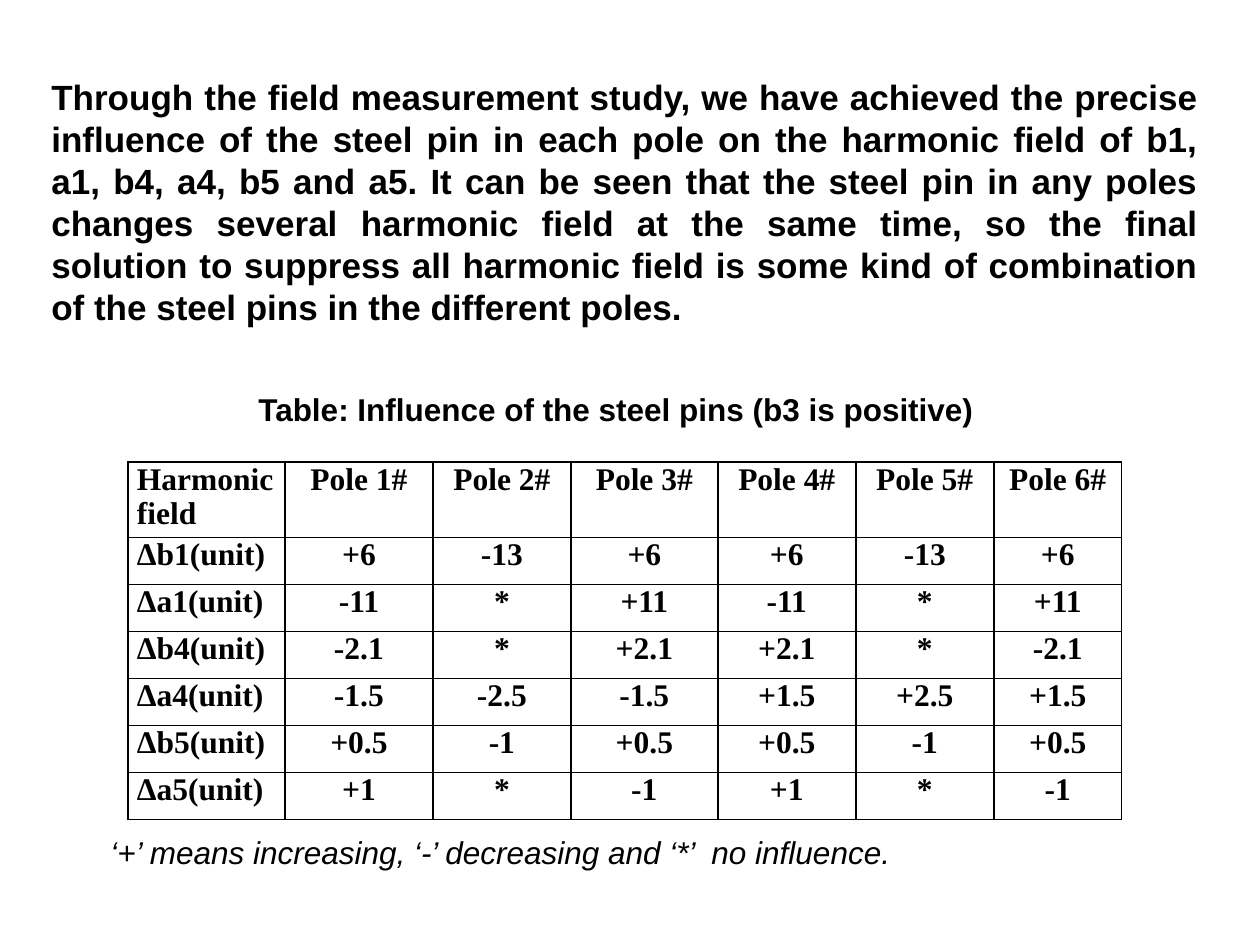
from pptx import Presentation
from pptx.dml.color import RGBColor as RGB
from pptx.enum.text import MSO_AUTO_SIZE as Fit, PP_ALIGN as Al
from pptx.oxml.ns import qn
from pptx.util import Pt
from lxml.etree import SubElement as Sub

SCALE = 914400 / 126  # EMU in one px
HUES = {"ink": "000000"}
SANS, SERIF = "Arial", "Times New Roman"

INTRO = (
    "Through the field measurement study, we have achieved the precise "
    "influence of the steel pin in each pole on the harmonic field of b1, "
    "a1, b4, a4, b5 and a5. It can be seen that the steel pin in any poles "
    "changes several harmonic field at the same time, so the final solution "
    "to suppress all harmonic field is some kind of combination of the steel "
    "pins in the different poles."
)
TITLE = "Table: Influence of the steel pins (b3 is positive)"
NOTE = "‘+’ means increasing, ‘-’ decreasing and ‘*’  no influence."

COLS = [157, 148, 138, 147, 138, 138, 128]
HEAD_H, ROW_H = 69, 47
HEAD = ["Harmonic\nfield"] + [f"Pole {n}#" for n in range(1, 7)]
DATA = {
    "b1": ["+6", "-13", "+6", "+6", "-13", "+6"],
    "a1": ["-11", "*", "+11", "-11", "*", "+11"],
    "b4": ["-2.1", "*", "+2.1", "+2.1", "*", "-2.1"],
    "a4": ["-1.5", "-2.5", "-1.5", "+1.5", "+2.5", "+1.5"],
    "b5": ["+0.5", "-1", "+0.5", "+0.5", "-1", "+0.5"],
    "a5": ["+1", "*", "-1", "+1", "*", "-1"],
}


def px(n):
    return round(n * SCALE)


def add_run(para, text, size, face, bold=False, slant=False):
    run = para.add_run()
    run.text = text
    font = run.font
    font.size, font.name = Pt(size), face
    font.bold, font.italic = bold, slant
    font.color.rgb = RGB.from_string(HUES["ink"])


def add_text(slide, box, text, size, **style):
    frame = slide.shapes.add_textbox(*map(px, box)).text_frame
    frame.word_wrap = True
    frame.auto_size = Fit.SHAPE_TO_FIT_TEXT
    para = frame.paragraphs[0]
    para.alignment = Al.JUSTIFY
    add_run(para, text, size, SANS, **style)


def add_edges(cell):
    """Draw a 1 pt line on all four sides; lines go before the fill."""
    props = cell._tc.get_or_add_tcPr()
    for i, side in enumerate(("lnL", "lnR", "lnT", "lnB")):
        line = Sub(props, qn(f"a:{side}"), w=str(Pt(1)))
        fill = Sub(line, qn("a:solidFill"))
        Sub(fill, qn("a:srgbClr"), val=HUES["ink"])
        props.insert(i, line)


def fill_cell(cell, text, align):
    cell.margin_left = cell.margin_right = px(9)
    cell.margin_top = cell.margin_bottom = 0
    cell.fill.background()
    add_edges(cell)
    frame = cell.text_frame
    for i, part in enumerate(text.split("\n")):
        para = frame.add_paragraph() if i else frame.paragraphs[0]
        para.alignment = align
        add_run(para, part, 18, SERIF, bold=True)


def add_grid(slide, left, top):
    rows = [HEAD] + [[f"Δ{key}(unit)"] + vals for key, vals in DATA.items()]
    highs = [HEAD_H] + [ROW_H] * len(DATA)
    box = map(px, (left, top, sum(COLS), sum(highs)))
    table = slide.shapes.add_table(len(rows), len(COLS), *box).table
    table.first_row = table.horz_banding = False
    for col, wide in zip(table.columns, COLS):
        col.width = px(wide)
    for r, (row, high) in enumerate(zip(rows, highs)):
        table.rows[r].height = px(high)
        for c, text in enumerate(row):
            fill_cell(table.cell(r, c), text, Al.CENTER if c else Al.JUSTIFY)


def main():
    deck = Presentation()
    deck.slide_width, deck.slide_height = px(1260), px(945)
    slide = deck.slides.add_slide(deck.slide_layouts[6])

    # Finding
    add_text(slide, (39, 69, 1172, 267), INTRO, 20, bold=True)
    # Table with its caption and key
    add_grid(slide, 128, 462)
    add_text(slide, (246, 384, 748, 50), TITLE, 18, bold=True)
    add_text(slide, (98, 827, 1014, 50), NOTE, 18, slant=True)

    deck.save("out.pptx")


if __name__ == "__main__":
    main()
